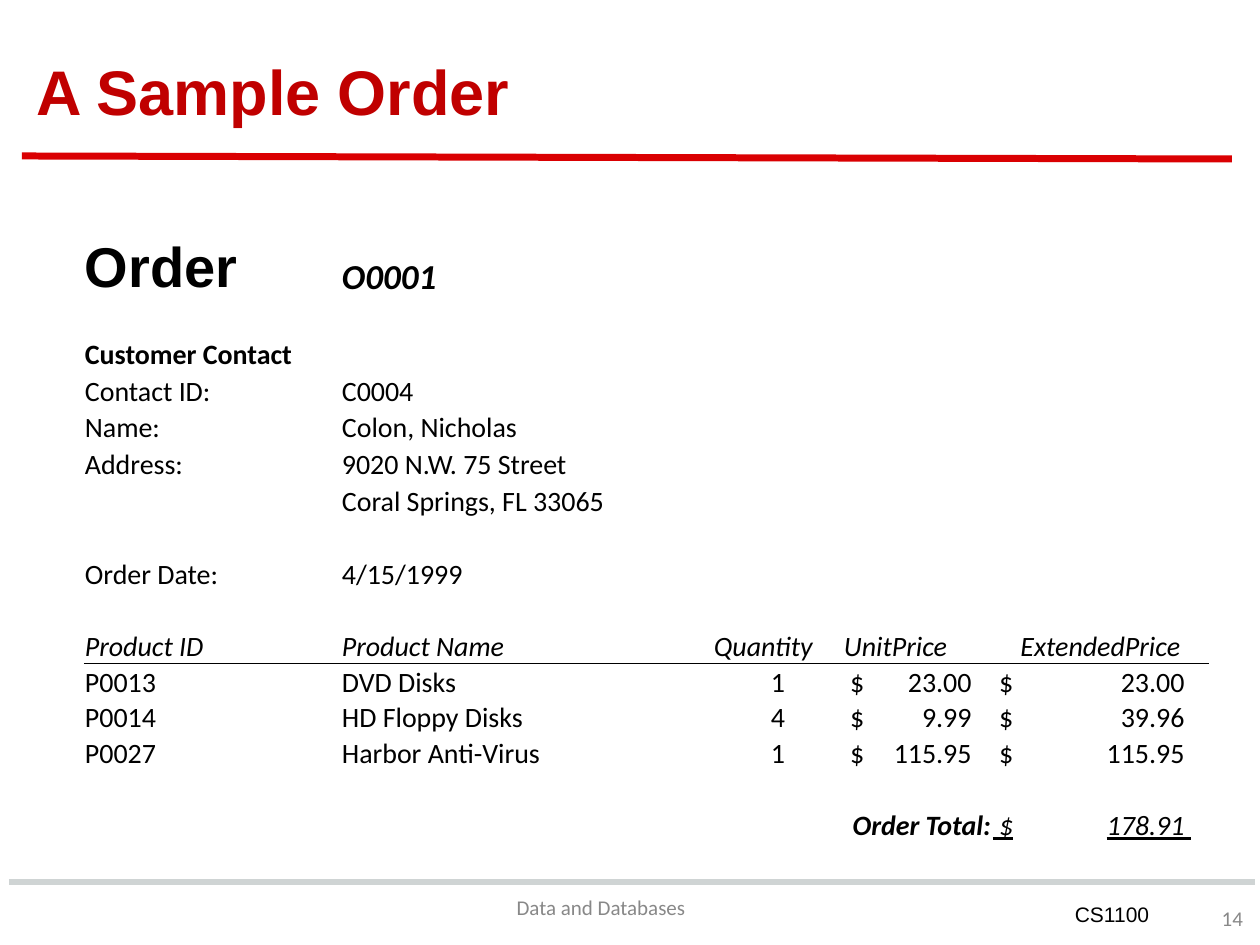
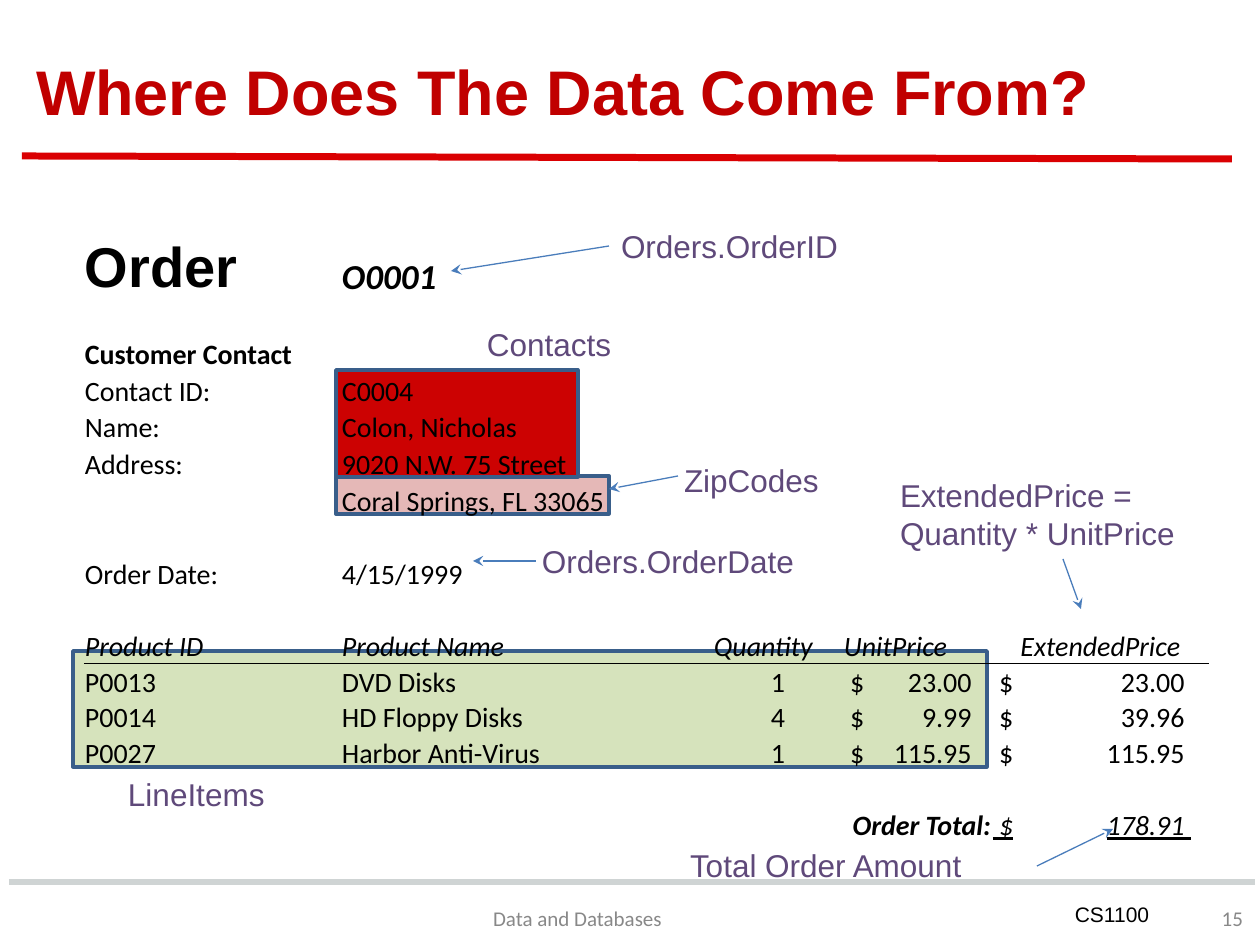
import lxml.etree
import pptx
import pptx.dml.color
import pptx.enum.shapes
import pptx.enum.text
import pptx.oxml.ns
import pptx.util

# Shared look
SCALE = 914400 / 126
WIDTH, HEIGHT = 1260, 945
BLACK, RED, BAR_RED, BAR_GRAY = "000000", "C00000", "DA0002", "CFD4D4"
GRAY, PURPLE, ARROW_BLUE, FRAME_BLUE = "888888", "5F497A", "4A7DBB", "395E8A"
LEFT, CENTER, RIGHT = (pptx.enum.text.PP_ALIGN.LEFT, pptx.enum.text.PP_ALIGN.CENTER,
                       pptx.enum.text.PP_ALIGN.RIGHT)
TOP, MIDDLE = pptx.enum.text.MSO_ANCHOR.TOP, pptx.enum.text.MSO_ANCHOR.MIDDLE
NO_TABLE_STYLE = "{2D5ABB26-0587-4C30-8999-92F81FD0307C}"

TITLE = dict(name="Arial", size=36, bold=True, color=RED)
COURSE = dict(name="Arial", size=12, color=BLACK)
FOOTER = dict(name="Calibri", size=12, color=GRAY)
NOTE = dict(name="Arial", size=18, color=PURPLE)
BODY = dict(name="Calibri", size=16, color=BLACK)
ITALIC = dict(BODY, italic=True)
STRONG = dict(BODY, bold=True)
ORDER = dict(name="Arial", size=32, bold=True, color=BLACK)
ORDER_NUMBER = dict(STRONG, size=20, italic=True)
TOTAL_LABEL = dict(STRONG, italic=True)
TOTAL = dict(ITALIC, underline=True)

# Order form: (row, format of the row, cell texts)
ORDER_ROWS = [
    (2, STRONG, ["Customer Contact"]),
    (3, BODY, ["Contact ID:", "C0004"]),
    (4, BODY, ["Name:", "Colon, Nicholas"]),
    (5, BODY, ["Address:", "9020 N.W. 75 Street"]),
    (6, BODY, ["", "Coral Springs, FL 33065"]),
    (8, BODY, ["Order Date:", "4/15/1999"]),
    (10, ITALIC, ["Product ID", "Product Name", "Quantity", "UnitPrice", "ExtendedPrice"]),
    (11, BODY, ["P0013", "DVD Disks", "1", " $\t23.00 ", " $\t23.00 "]),
    (12, BODY, ["P0014", "HD Floppy Disks", "4", " $\t9.99 ", " $\t39.96 "]),
    (13, BODY, ["P0027", "Harbor Anti-Virus", "1", " $\t115.95 ", " $\t115.95 "]),
]
HEADER_ROW, TOTAL_ROW = 10, 15
COLUMN_WIDTHS = [257, 372, 130, 149, 217]
ROW_HEIGHTS = [65, 36, 37, 37, 36, 37, 37, 36, 37, 36, 36, 36, 35, 36, 36, 36]
PRICE_TABS = {3: 134, 4: 198}

# Slides: frames lie behind the order form, notes and arrows in front
SLIDES = [
    dict(title="A Sample Order", number="14", footer=(478, 895, 246, 25),
         frames=[], notes=[], arrows=[]),
    dict(title="Where Does The Data Come From?", number="15", footer=(478, 897, 199, 42),
         frames=[((73, 651, 914, 116), "D6E3BC"),
                 ((336, 476, 273, 38), "E5B8B7"),
                 ((336, 370, 242, 107), "CC0202")],
         notes=[((609, 221, 273, 50), "Orders.OrderID"),
                ((475, 319, 165, 50), "Contacts"),
                ((672, 455, 171, 50), "ZipCodes"),
                ((530, 536, 314, 50), "Orders.OrderDate"),
                ((116, 769, 180, 50), "LineItems"),
                ((888, 470, 362, 89), "ExtendedPrice =\nQuantity * UnitPrice"),
                ((678, 840, 359, 50), "Total Order Amount")],
         arrows=[(609, 246, 451, 271), (678, 476, 609, 489), (536, 561, 473, 561),
                 (1063, 559, 1081, 609), (1037, 866, 1113, 829)]),
]


def px(value):
    return pptx.util.Emu(round(value * SCALE))


def rgb(value):
    return pptx.dml.color.RGBColor.from_string(value)


def add_element(parent, tag, **attributes):
    return lxml.etree.SubElement(parent, pptx.oxml.ns.qn(tag), **attributes)


def write_paragraph(paragraph, text, style, align=LEFT):
    paragraph.alignment = align
    run = paragraph.add_run()
    run.text = text
    for key, value in style.items():
        if key == "color":
            run.font.color.rgb = rgb(value)
        else:
            setattr(run.font, key, pptx.util.Pt(value) if key == "size" else value)


def add_text(slide, box, text, style, align=LEFT, anchor=TOP, inset=6):
    frame = slide.shapes.add_textbox(*map(px, box)).text_frame
    settings = dict(word_wrap=True, vertical_anchor=anchor, margin_left=px(12),
                    margin_right=px(12), margin_top=px(inset), margin_bottom=px(inset))
    for key, value in settings.items():
        setattr(frame, key, value)
    for index, line in enumerate(text.split("\n")):
        paragraph = frame.add_paragraph() if index else frame.paragraphs[0]
        write_paragraph(paragraph, line, style, align)


def add_line(slide, ends, color, width, arrow=False):
    line = slide.shapes.add_connector(pptx.enum.shapes.MSO_CONNECTOR.STRAIGHT, *map(px, ends))
    line.line.color.rgb = rgb(color)
    line.line.width = pptx.util.Pt(width)
    if arrow:
        add_element(line.line._get_or_add_ln(), "a:tailEnd", type="stealth")
    add_element(line._element.spPr, "a:effectLst")


def add_frame(slide, box, fill):
    shape = slide.shapes.add_shape(pptx.enum.shapes.MSO_SHAPE.RECTANGLE, *map(px, box))
    shape.shadow.inherit = False
    shape.fill.solid()
    shape.fill.fore_color.rgb = rgb(fill)
    shape.line.color.rgb = rgb(FRAME_BLUE)
    shape.line.width = pptx.util.Pt(2)


def underline_cell(cell):
    properties = cell._tc.get_or_add_tcPr()
    border = add_element(properties, "a:lnB", w="9525")
    add_element(add_element(border, "a:solidFill"), "a:srgbClr", val=BLACK)
    properties.insert(0, border)


def write_cell(cell, text, style, align=LEFT, tab=None):
    paragraph = cell.text_frame.paragraphs[0]
    if tab:
        tabs = add_element(paragraph._p.get_or_add_pPr(), "a:tabLst")
        add_element(tabs, "a:tab", pos=str(px(tab)), algn="r")
    write_paragraph(paragraph, text, style, align)


def add_order_form(slide):
    graphic = slide.shapes.add_table(len(ROW_HEIGHTS), len(COLUMN_WIDTHS), px(84), px(231),
                                     px(sum(COLUMN_WIDTHS)), px(sum(ROW_HEIGHTS)))
    table = graphic.table
    table.first_row = table.horz_banding = False
    table._tbl.tblPr.find(pptx.oxml.ns.qn("a:tableStyleId")).text = NO_TABLE_STYLE
    for column, width in zip(table.columns, COLUMN_WIDTHS):
        column.width = px(width)
    for row, height in zip(table.rows, ROW_HEIGHTS):
        row.height = px(height)

    # Every cell: no fill, thin margins, small type while empty
    for cell in table.iter_cells():
        cell.fill.background()
        cell.vertical_anchor = pptx.enum.text.MSO_ANCHOR.BOTTOM
        cell.margin_left = cell.margin_right = cell.margin_top = px(1)
        cell.margin_bottom = 0
        add_element(cell.text_frame.paragraphs[0]._p, "a:endParaRPr", sz="1200")

    # Heading, details and product lines
    write_cell(table.cell(0, 0), "Order", ORDER)
    write_cell(table.cell(0, 1), "O0001", ORDER_NUMBER)
    for row, style, texts in ORDER_ROWS:
        is_header = row == HEADER_ROW
        centered_column = 4 if is_header else 2
        for column, text in enumerate(texts):
            cell = table.cell(row, column)
            if text:
                align = CENTER if column == centered_column else LEFT
                tab = None if is_header else PRICE_TABS.get(column)
                write_cell(cell, text, style, align, tab)
            if is_header:
                underline_cell(cell)

    # Total
    table.cell(TOTAL_ROW, 2).merge(table.cell(TOTAL_ROW, 3))
    write_cell(table.cell(TOTAL_ROW, 2), "Order Total:", TOTAL_LABEL, RIGHT)
    write_cell(table.cell(TOTAL_ROW, 4), " $\t178.91 ", TOTAL, tab=PRICE_TABS[4])


def add_base(slide, content):
    add_line(slide, (9, 882, 1255, 882), BAR_GRAY, 4)
    add_text(slide, (1027, 890, 170, 55), "CS1100", COURSE, CENTER, inset=12)
    add_line(slide, (22, 156, 1232, 159), BAR_RED, 4)
    for box, fill in content["frames"]:
        add_frame(slide, box, fill)
    add_text(slide, (24, 37, 1231, 106), content["title"], TITLE, anchor=MIDDLE)
    add_text(slide, (1179, 895, 76, 47), content["number"], FOOTER, RIGHT, MIDDLE)
    add_text(slide, content["footer"], "Data and Databases", FOOTER, CENTER, MIDDLE)


def main():
    presentation = pptx.Presentation()
    presentation.slide_width, presentation.slide_height = px(WIDTH), px(HEIGHT)
    for content in SLIDES:
        slide = presentation.slides.add_slide(presentation.slide_layouts[6])
        add_base(slide, content)
        add_order_form(slide)
        for box, text in content["notes"]:
            add_text(slide, box, text, NOTE)
        for ends in content["arrows"]:
            add_line(slide, ends, ARROW_BLUE, 0.75, arrow=True)
    presentation.save("out.pptx")


if __name__ == "__main__":
    main()
